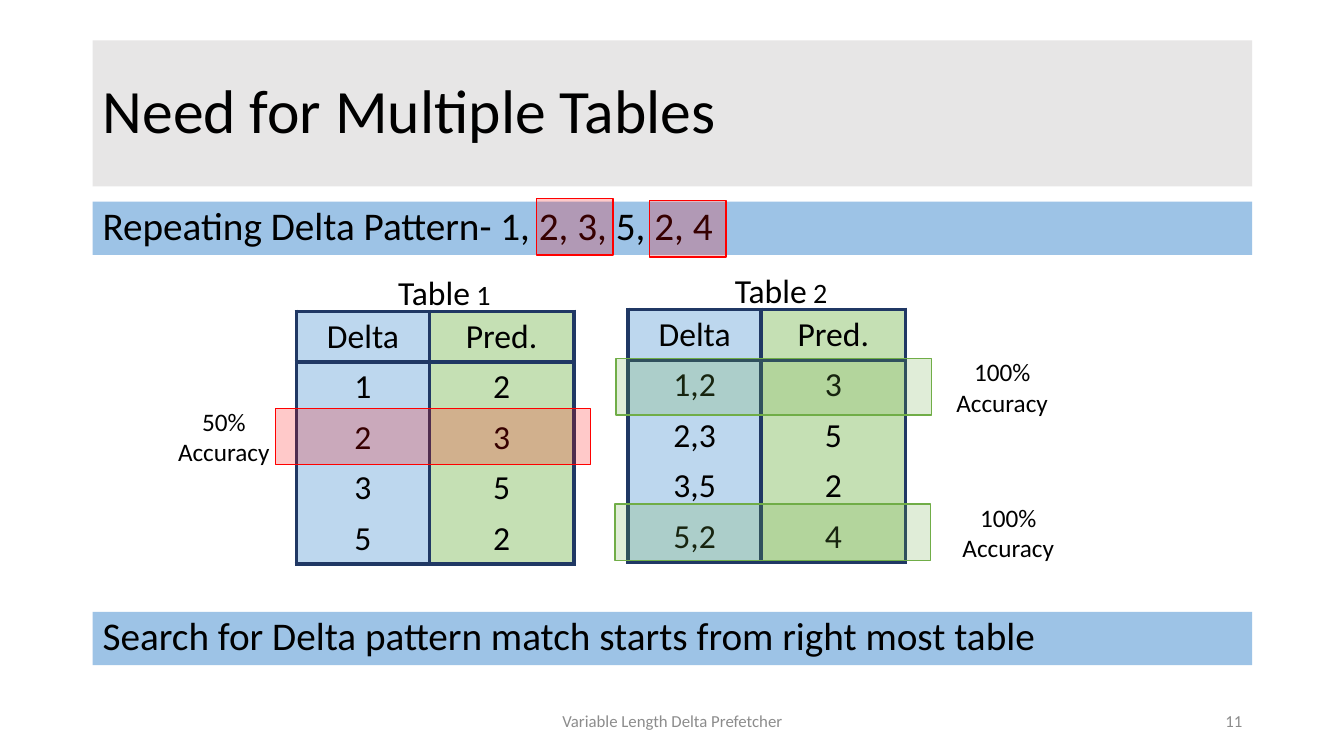
"""Build the slide that explains why several delta tables are needed."""
from dataclasses import dataclass

from lxml import etree
from pptx import Presentation
from pptx.dml.color import RGBColor
from pptx.enum.shapes import MSO_SHAPE
from pptx.enum.text import MSO_ANCHOR, PP_ALIGN
from pptx.oxml.ns import qn
from pptx.util import Inches, Pt

RECT = MSO_SHAPE.RECTANGLE
TOP, MIDDLE = MSO_ANCHOR.TOP, MSO_ANCHOR.MIDDLE
LEFT, CENTER, RIGHT = PP_ALIGN.LEFT, PP_ALIGN.CENTER, PP_ALIGN.RIGHT

FONT = "Calibri"
BLACK, GRAY, TITLE_FILL, BAR_FILL = "000000", "8C8C8C", "E7E6E6", "9DC3E6"
COLUMN_FILLS, COLUMN_WIDTHS = ("BDD7EE", "C5E0B4"), (1.32, 1.43)
BORDER, BORDER_PT, ROW_HEIGHT = "203864", 3, 0.49
RED, GREEN = "FF0000", "70AD47"
HEADER = ("Delta", "Pred.")


@dataclass(frozen=True)
class Label:
    text: str
    x: float
    y: float
    w: float
    h: float
    size: int
    color: str = BLACK
    fill: str | None = None
    align: PP_ALIGN = LEFT
    anchor: MSO_ANCHOR = TOP
    spacing: float = 1.0


@dataclass(frozen=True)
class DeltaTable:
    number: int
    x: float
    y: float
    caption_x: float
    caption_y: float
    rows: tuple[tuple[str, str], ...]


@dataclass(frozen=True)
class Highlight:
    x: float
    y: float
    w: float
    color: str


def bar(text: str, y: float) -> Label:
    return Label(text, 0.92, y, 11.5, 0.53, 28, fill=BAR_FILL, spacing=0.9)


def accuracy(percent: int, x: float, y: float) -> Label:
    return Label(f"{percent}% Accuracy", x, y, 1.16, 0.71, 18, align=CENTER)


LABELS = (
    Label("Need for Multiple Tables", 0.92, 0.4, 11.5, 1.45, 44,
          fill=TITLE_FILL, anchor=MIDDLE, spacing=0.9),
    bar("Repeating Delta Pattern- 1, 2, 3, 5, 2, 4", 2),
    bar("Search for Delta pattern match starts from right most table", 6.07),
    accuracy(50, 1.64, 3.98),
    accuracy(100, 9.36, 3.49),
    accuracy(100, 9.42, 4.93),
    Label("Variable Length Delta Prefetcher", 4.42, 6.95, 4.5, 0.4, 12, GRAY,
          align=CENTER, anchor=MIDDLE),
    Label("11", 9.42, 6.95, 3, 0.4, 12, GRAY, align=RIGHT, anchor=MIDDLE),
)
TABLES = (
    DeltaTable(1, 2.94, 3.09, 3.85, 2.65,
               (("1", "2"), ("2", "3"), ("3", "5"), ("5", "2"))),
    DeltaTable(2, 6.23, 3.07, 7.19, 2.63,
               (("1,2", "3"), ("2,3", "5"), ("3,5", "2"), ("5,2", "4"))),
)
HIGHLIGHTS = (
    Highlight(2.73, 4.05, 3.13, RED),
    Highlight(5.32, 1.97, 0.76, RED),
    Highlight(6.44, 1.99, 0.76, RED),
    Highlight(6.11, 3.56, 3.13, GREEN),
    Highlight(6.1, 5, 3.13, GREEN),
)


def rgb(color: str) -> RGBColor:
    return RGBColor.from_string(color)


def add_run(p, text: str, *, size: int, color: str = BLACK) -> None:
    r = p.add_run()
    r.text = text
    r.font.name = FONT
    r.font.size = Pt(size)
    r.font.color.rgb = rgb(color)


def add_label(s, label: Label):
    sp = s.shapes.add_textbox(*map(Inches, (label.x, label.y, label.w, label.h)))
    if label.fill:
        sp.fill.solid()
        sp.fill.fore_color.rgb = rgb(label.fill)
    tf = sp.text_frame
    tf.word_wrap = True
    tf.vertical_anchor = label.anchor
    p = tf.paragraphs[0]
    p.alignment = label.align
    p.line_spacing = label.spacing
    add_run(p, label.text, size=label.size, color=label.color)
    return sp


def set_borders(cell, drawn: str) -> None:
    tc_pr = cell._tc.get_or_add_tcPr()
    for i, side in enumerate("LRTB"):
        ln = etree.Element(qn(f"a:ln{side}"), w=str(Pt(BORDER_PT)))
        if side in drawn:
            fill = etree.SubElement(ln, qn("a:solidFill"))
            etree.SubElement(fill, qn("a:srgbClr"), val=BORDER)
        else:
            etree.SubElement(ln, qn("a:noFill"))
        tc_pr.insert(i, ln)


def add_delta_table(s, table: DeltaTable) -> None:
    rows = (HEADER, *table.rows)
    last = len(rows) - 1
    sides = {0: "LRTB", 1: "LRT", last: "LRB"}
    size = map(Inches, (table.x, table.y, sum(COLUMN_WIDTHS), ROW_HEIGHT * len(rows)))
    tbl = s.shapes.add_table(len(rows), len(HEADER), *size).table
    tbl.first_row = tbl.horz_banding = False
    for column, width in zip(tbl.columns, COLUMN_WIDTHS):
        column.width = Inches(width)
    for i, values in enumerate(rows):
        tbl.rows[i].height = Inches(ROW_HEIGHT)
        for j, value in enumerate(values):
            cell = tbl.cell(i, j)
            cell.fill.solid()
            cell.fill.fore_color.rgb = rgb(COLUMN_FILLS[j])
            p = cell.text_frame.paragraphs[0]
            p.alignment = CENTER
            add_run(p, value, size=24)
            set_borders(cell, sides.get(i, "LR"))
    caption = Label("Table", table.caption_x, table.caption_y, 1.35, 0.5, 24)
    sp = add_label(s, caption)
    add_run(sp.text_frame.paragraphs[0], f" {table.number}", size=20)


def add_highlight(s, mark: Highlight) -> None:
    sp = s.shapes.add_shape(RECT, *map(Inches, (mark.x, mark.y, mark.w, 0.56)))
    sp.shadow.inherit = False
    sp.fill.solid()
    sp.fill.fore_color.rgb = rgb(mark.color)
    clr = sp._element.spPr.find(qn("a:solidFill")).find(qn("a:srgbClr"))
    etree.SubElement(clr, qn("a:alpha"), val="21000")
    sp.line.color.rgb = rgb(mark.color)
    sp.line.width = Pt(1)


def main() -> None:
    prs = Presentation()
    prs.slide_width, prs.slide_height = Inches(13.33), Inches(7.5)
    s = prs.slides.add_slide(prs.slide_layouts[6])
    for label in LABELS:
        add_label(s, label)
    for table in TABLES:
        add_delta_table(s, table)
    for mark in HIGHLIGHTS:
        add_highlight(s, mark)
    prs.save("out.pptx")


if __name__ == "__main__":
    main()
